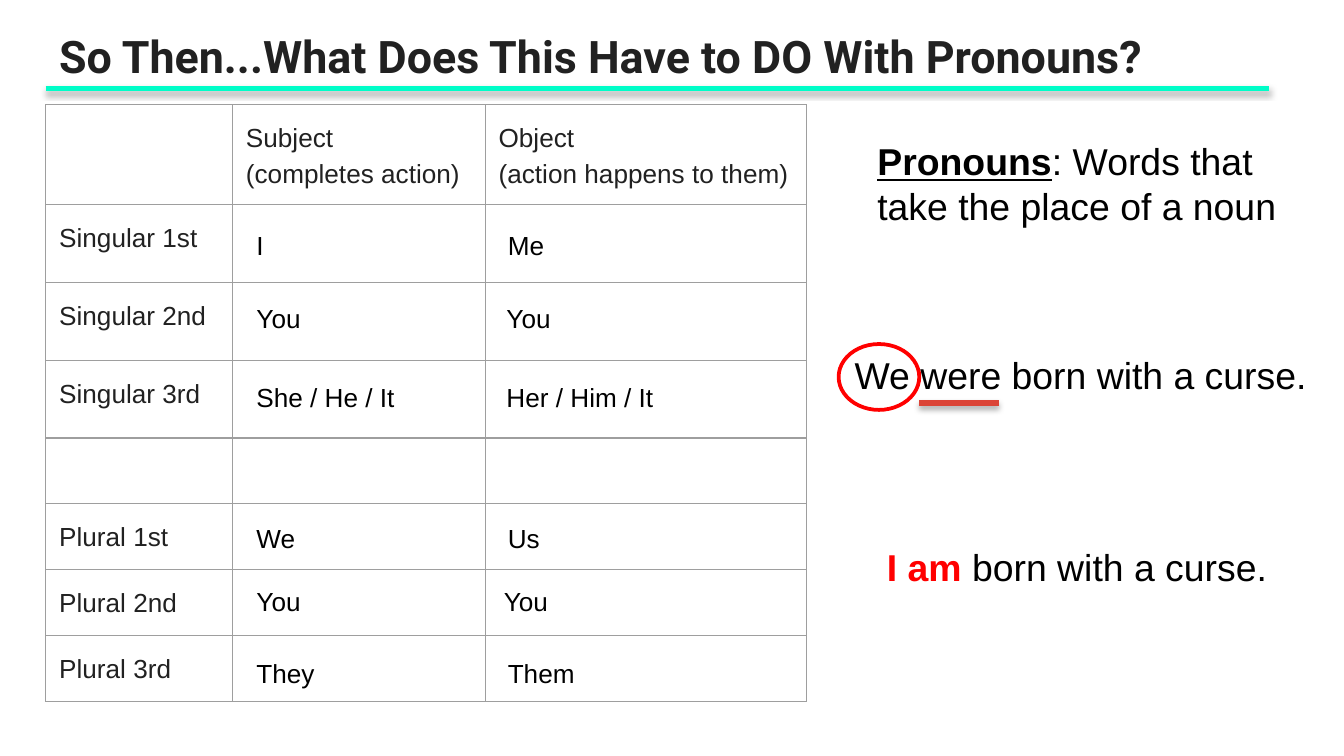
from lxml.etree import SubElement
from pptx import Presentation
from pptx.dml.color import RGBColor
from pptx.enum.shapes import MSO_CONNECTOR, MSO_SHAPE
from pptx.enum.text import MSO_ANCHOR, MSO_AUTO_SIZE, PP_ALIGN
from pptx.oxml import parse_xml
from pptx.oxml.ns import nsdecls, qn
from pptx.util import Inches, Pt

# Content
TITLE = "So Then...What Does This Have to DO With Pronouns?"
COLUMNS = [1.39, 1.88, 2.39]
ROWS = [0.74, 0.58, 0.58, 0.58, 0.49, 0.49, 0.49, 0.49]
HEADINGS = [[], ["Subject", "(completes action)"],
            ["Object", "(action happens to them)"]]
PERSONS = ["Singular 1st", "Singular 2nd", "Singular 3rd", "",
           "Plural 1st", "Plural 2nd", "Plural 3rd"]
SUBJECT_LEFT = 1.81
# top, subject with its width, object with its left and width
PRONOUNS = [
    (1.66, ("I", 0.26), ("Me", 3.68, 0.47)),
    (2.2, ("You", 0.55), ("You", 3.67, 0.55)),
    (2.79, ("She / He / It", 1.24), ("Her / Him / It", 3.67, 1.3)),
    (3.84, ("We", 0.5), ("Us", 3.68, 0.44)),
    (4.31, ("You", 0.55), ("You", 3.65, 0.55)),
    (4.84, ("They", 0.64), ("Them", 3.68, 0.7)),
]
# box, runs of (text, colour, bold, underline)
SENTENCES = [
    ((6.43, 0.98, 3.23, 0.77),
     [("Pronouns", "000000", True, True),
      (": Words that take the place of a noun", "000000", False, False)]),
    ((6.26, 2.57, 3.85, 0.44),
     [("We were born with a curse.", "000000", False, False)]),
    ((6.5, 4, 3.09, 0.44),
     [("I am ", "FF0000", True, False),
      ("born with a curse.", "000000", False, False)]),
]
# left, right, y, colour
RULES = [(6.84, 7.43, 3, "DB4437"), (0.34, 9.44, 0.66, "00FDC8")]


def rgb(value):
    return RGBColor.from_string(value)


def add_run(p, text, size, color, bold=False, underline=False, font="Arial"):
    r = p.add_run()
    r.text = text
    r.font.name, r.font.size = font, Pt(size)
    r.font.bold, r.font.underline = bold, underline
    r.font.color.rgb = rgb(color)


def add_text(s, box, runs, size, wrap):
    tf = s.shapes.add_textbox(*map(Inches, box)).text_frame
    tf.word_wrap = wrap
    tf.auto_size = MSO_AUTO_SIZE.SHAPE_TO_FIT_TEXT
    for text, color, bold, underline in runs:
        add_run(tf.paragraphs[0], text, size, color, bold, underline)


def fill_cell(cell, lines):
    cell.fill.background()
    if lines:
        cell.margin_left = cell.margin_right = Inches(0.1)
        cell.margin_top = cell.margin_bottom = Inches(0.1)
    tf = cell.text_frame
    for i, line in enumerate(lines):
        p = tf.add_paragraph() if i else tf.paragraphs[0]
        p.line_spacing = 1.2
        add_run(p, line, 14, "212121")
    # Borders come before the fill
    tcPr = cell._tc.get_or_add_tcPr()
    for i, side in enumerate(("lnL", "lnR", "lnT", "lnB")):
        tcPr.insert(i, parse_xml(
            f'<a:{side} {nsdecls("a")} w="{Pt(0.75)}"><a:solidFill>'
            f'<a:srgbClr val="9E9E9E"/></a:solidFill></a:{side}>'))


def add_rule(s, left, right, y, color):
    line = s.shapes.add_connector(MSO_CONNECTOR.STRAIGHT, Inches(left),
                                  Inches(y), Inches(right), Inches(y))
    line.line.color.rgb = rgb(color)
    line.line.width = Pt(3)
    effects = SubElement(line._element.spPr, qn("a:effectLst"))
    effects.append(parse_xml(
        f'<a:outerShdw {nsdecls("a")} blurRad="{Pt(3.1)}" dist="{Pt(1.8)}" '
        'dir="5400000" algn="t" rotWithShape="0"><a:srgbClr val="000000">'
        '<a:alpha val="35000"/></a:srgbClr></a:outerShdw>'))


# Widescreen slide, 16 to 9
prs = Presentation()
prs.slide_width, prs.slide_height = Inches(10), Inches(10 * 9 / 16)
s = prs.slides.add_slide(prs.slide_layouts[5])

# Title
title = s.shapes.title
title.left, title.top = Inches(0.34), Inches(0.11)
title.width, title.height = Inches(9.32), Inches(0.86)
tf = title.text_frame
tf.margin_left = tf.margin_right = tf.margin_top = tf.margin_bottom = Inches(0.1)
tf.vertical_anchor = MSO_ANCHOR.TOP
tf.auto_size = MSO_AUTO_SIZE.NONE
tf.paragraphs[0].alignment = PP_ALIGN.LEFT
add_run(tf.paragraphs[0], TITLE, 24, "212121", bold=True, font="Roboto")

# Table
table = s.shapes.add_table(len(ROWS), len(COLUMNS), Inches(0.34), Inches(0.78),
                           Inches(sum(COLUMNS)), Inches(sum(ROWS))).table
table.first_row = table.horz_banding = False
for column, width in zip(table.columns, COLUMNS):
    column.width = Inches(width)
for row, height in zip(table.rows, ROWS):
    row.height = Inches(height)
grid = [HEADINGS] + [[[person] if person else [], [], []] for person in PERSONS]
for row, contents in zip(table.rows, grid):
    for cell, lines in zip(row.cells, contents):
        fill_cell(cell, lines)

# Pronouns laid over the table
for top, (subject, subject_width), (obj, left, width) in PRONOUNS:
    for text, x, w in ((subject, SUBJECT_LEFT, subject_width), (obj, left, width)):
        add_text(s, (x, top, w, 0.34), [(text, "000000", False, False)], 14, False)

# Definition and example sentences
for box, runs in SENTENCES:
    add_text(s, box, runs, 20, True)

# Circle round the subject
circle = s.shapes.add_shape(MSO_SHAPE.OVAL, Inches(6.24), Inches(2.56),
                            Inches(0.6), Inches(0.49))
circle.shadow.inherit = False
circle.fill.background()
circle.line.color.rgb = rgb("FF0000")
circle.line.width = Pt(2)

# Underline of the verb and rule below the title
for rule in RULES:
    add_rule(s, *rule)

prs.save("out.pptx")
